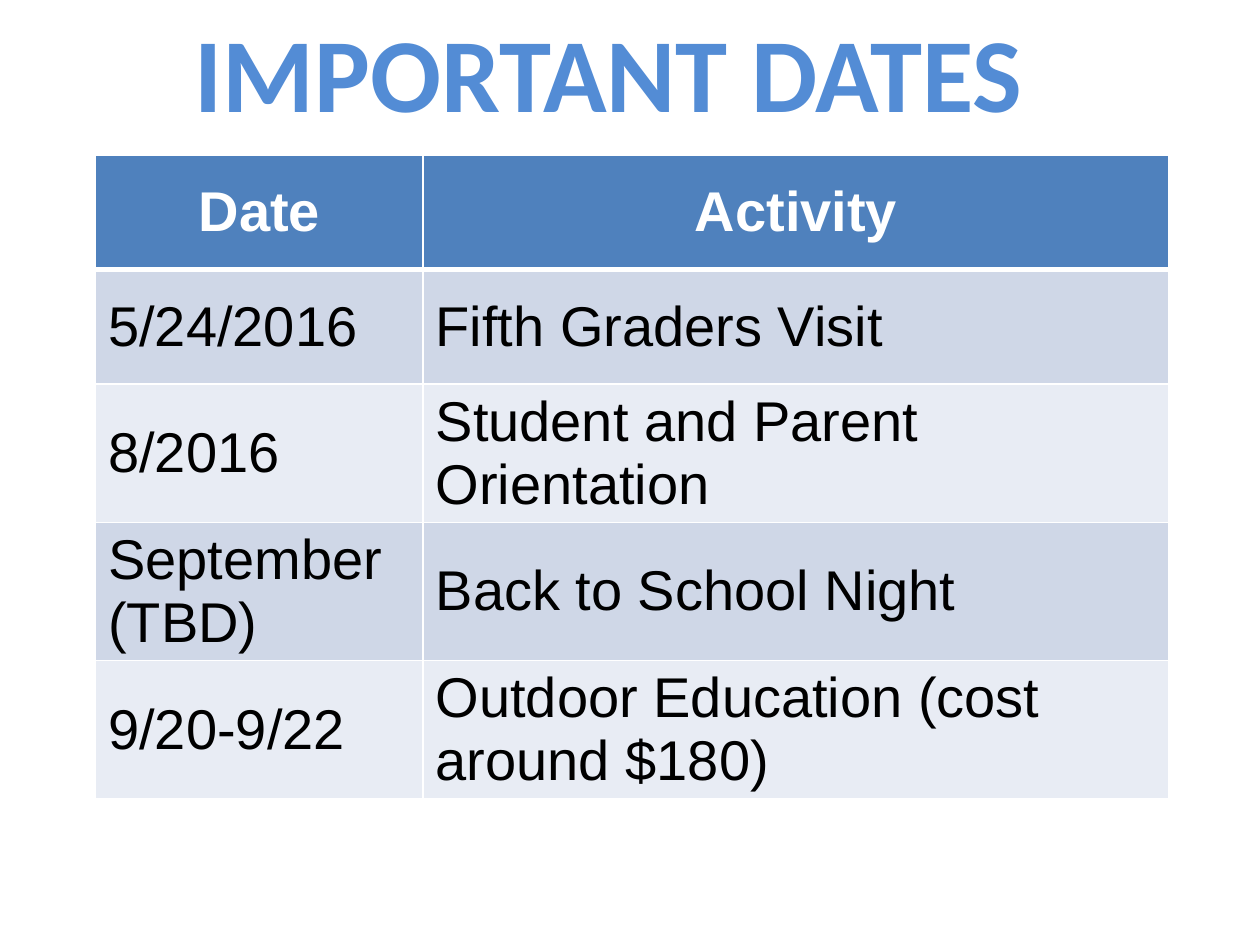
from dataclasses import dataclass

from pptx import Presentation
from pptx.dml.color import RGBColor as Rgb
from pptx.enum.text import MSO_ANCHOR as Anchor, PP_ALIGN as Align
from pptx.oxml.ns import qn
from pptx.util import Cm, Pt
from lxml.etree import SubElement as Sub


@dataclass(frozen=True)
class Theme:
    title: str = "538CD5"
    head: str = "4F81BD"
    bands: tuple = ("CFD7E7", "E8ECF4")
    ink: str = "000000"
    line: str = "FFFFFF"
    title_font: str = "Calibri"
    body_font: str = "Arial"
    title_size: int = 60
    body_size: int = 32
    thin: int = 1
    thick: int = 3


THEME = Theme()
DATES = [
    ("Date", "Activity"),
    ("5/24/2016", "Fifth Graders Visit"),
    ("8/2016", "Student and Parent Orientation"),
    ("September (TBD)", "Back to School Night"),
    ("9/20-9/22", "Outdoor Education (cost around $180)"),
]


def set_font(para, name, size, color, bold):
    font = para.font
    font.name, font.size, font.bold = name, Pt(size), bold
    font.color.rgb = Rgb.from_string(color)


def add_title(slide, box, text):
    frame = slide.shapes.add_textbox(*box).text_frame
    frame.word_wrap = True
    frame.text = text
    set_font(frame.paragraphs[0], THEME.title_font, THEME.title_size, THEME.title, True)


def set_edges(cell, top, bottom):
    props = cell._tc.get_or_add_tcPr()
    edges = {"L": THEME.thin, "R": THEME.thin, "T": top, "B": bottom}
    for side, width in edges.items():
        line = Sub(props, qn(f"a:ln{side}"), w=str(Pt(width)))
        Sub(Sub(line, qn("a:solidFill")), qn("a:srgbClr"), val=THEME.line)


def style_cell(cell, text, row):
    head = row == 0
    set_edges(cell, THEME.thick if row == 1 else THEME.thin,
              THEME.thick if head else THEME.thin)
    cell.fill.solid()
    fill = THEME.head if head else THEME.bands[(row - 1) % 2]
    cell.fill.fore_color.rgb = Rgb.from_string(fill)
    cell.vertical_anchor = Anchor.MIDDLE
    cell.text = text
    para = cell.text_frame.paragraphs[0]
    para.alignment = Align.CENTER if head else Align.LEFT
    color = THEME.line if head else THEME.ink
    set_font(para, THEME.body_font, THEME.body_size, color, head)


def add_dates(slide, box, rows, first):
    left, top, width, height = box
    table = slide.shapes.add_table(len(rows), 2, left, top, width, height).table
    table.columns[0].width = first
    table.columns[1].width = width - first
    for r, row in enumerate(rows):
        for c, text in enumerate(row):
            style_cell(table.cell(r, c), text, r)


def main():
    deck = Presentation()
    deck.slide_width, deck.slide_height = Cm(25.4), Cm(19.05)
    slide = deck.slides.add_slide(deck.slide_layouts[6])
    add_dates(slide, (Cm(1.93), Cm(3.12), Cm(21.64), Cm(11.56)), DATES, Cm(6.6))
    add_title(slide, (Cm(3.68), Cm(0.03), Cm(17.81), Cm(2.82)), "IMPORTANT DATES")
    deck.save("out.pptx")


if __name__ == "__main__":
    main()
